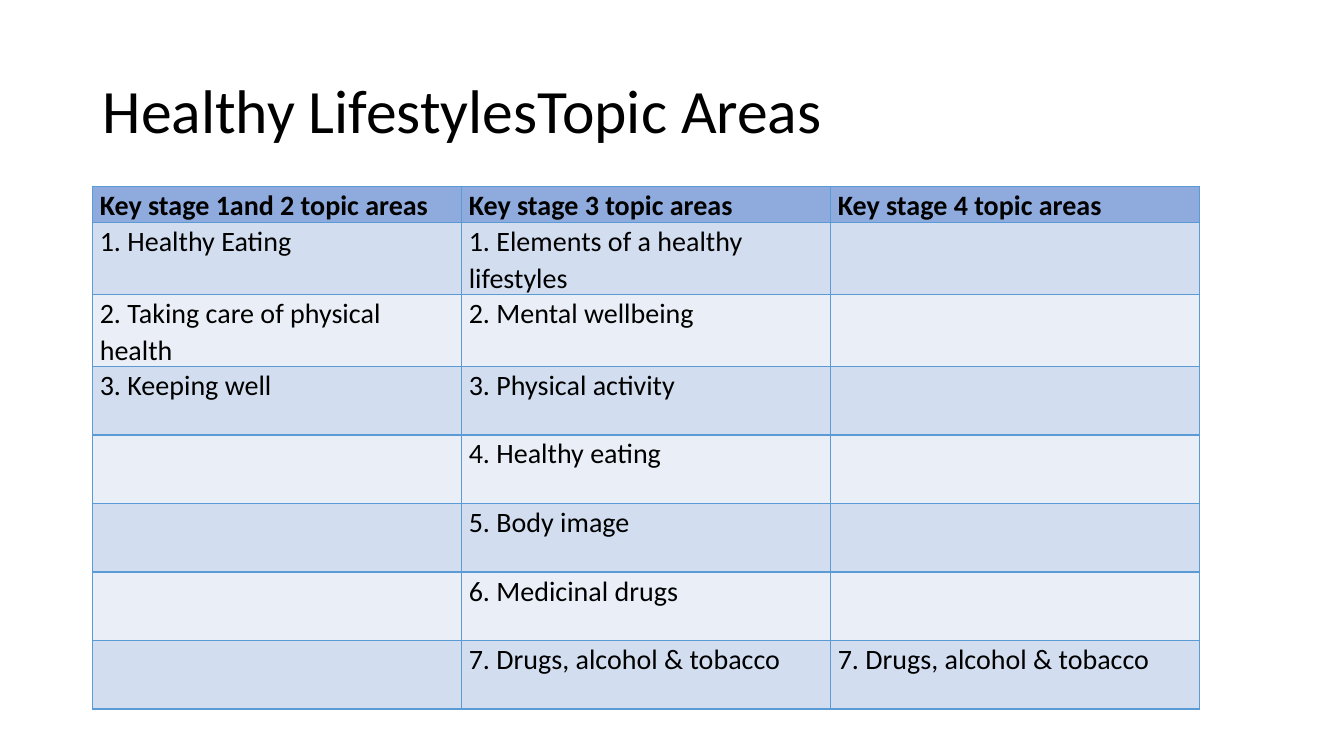
import pptx
import pptx.util
import pptx.dml.color
import pptx.enum.text
import pptx.oxml
import pptx.oxml.ns

SCALE = 9144
FONT = {"name": "Calibri", "size": pptx.util.Pt(20)}
INSET = {"margin_left": 7 * SCALE, "margin_right": 7 * SCALE,
         "margin_top": 0, "margin_bottom": 0}
ROWS = [
    ("Key stage 1and 2 topic areas", "Key stage 3 topic areas", "Key stage 4 topic areas"),
    ("1. Healthy Eating", "1. Elements of a healthy lifestyles", ""),
    ("2. Taking care of physical health", "2. Mental wellbeing", ""),
    ("3. Keeping well", "3. Physical activity", ""),
    ("", "4. Healthy eating", ""),
    ("", "5. Body image", ""),
    ("", "6. Medicinal drugs", ""),
    ("", "7. Drugs, alcohol & tobacco", "7. Drugs, alcohol & tobacco"),
]
HIGHS = [31, 59] + [68] * 6
BANDS = ["EAEFF7", "D2DEEF"]


def color(hex):
    return pptx.dml.color.RGBColor.from_string(hex)


def write(para, text, space, form):
    para.line_spacing = space
    run = para.add_run()
    run.text = text
    run.font.color.rgb = color("000000")
    for key, val in form.items():
        setattr(run.font, key, val)


deck = pptx.Presentation()
deck.slide_width = 1333 * SCALE
deck.slide_height = 750 * SCALE
slide = deck.slides.add_slide(deck.slide_layouts[6])

title = slide.shapes.add_textbox(*[n * SCALE for n in (92, 40, 1150, 145)])
frame = title.text_frame
frame.word_wrap = True
frame.vertical_anchor = pptx.enum.text.MSO_ANCHOR.MIDDLE
write(frame.paragraphs[0], "Healthy LifestylesTopic Areas", 0.9,
      FONT | {"size": pptx.util.Pt(44)})

place = [n * SCALE for n in (92, 185, 1098, sum(HIGHS))]
table = slide.shapes.add_table(len(ROWS), 3, *place).table
table.first_row = True
table.horz_banding = False
for col in table.columns:
    col.width = 366 * SCALE

for r, (texts, high) in enumerate(zip(ROWS, HIGHS)):
    table.rows[r].height = high * SCALE
    for c, text in enumerate(texts):
        cell = table.cell(r, c)
        props = cell._tc.get_or_add_tcPr()
        for side in "LRTB":
            props.append(pptx.oxml.parse_xml(
                f'<a:ln{side} {pptx.oxml.ns.nsdecls("a")} w="12700"><a:solidFill>'
                f'<a:srgbClr val="5B9BD5"/></a:solidFill></a:ln{side}>'))
        cell.fill.solid()
        cell.fill.fore_color.rgb = color(BANDS[r % 2] if r else "8FAADC")
        if text:
            for key, val in INSET.items():
                setattr(cell, key, val)
            write(cell.text_frame.paragraphs[0], text, 1.07, FONT | {"bold": r == 0})

deck.save("out.pptx")
